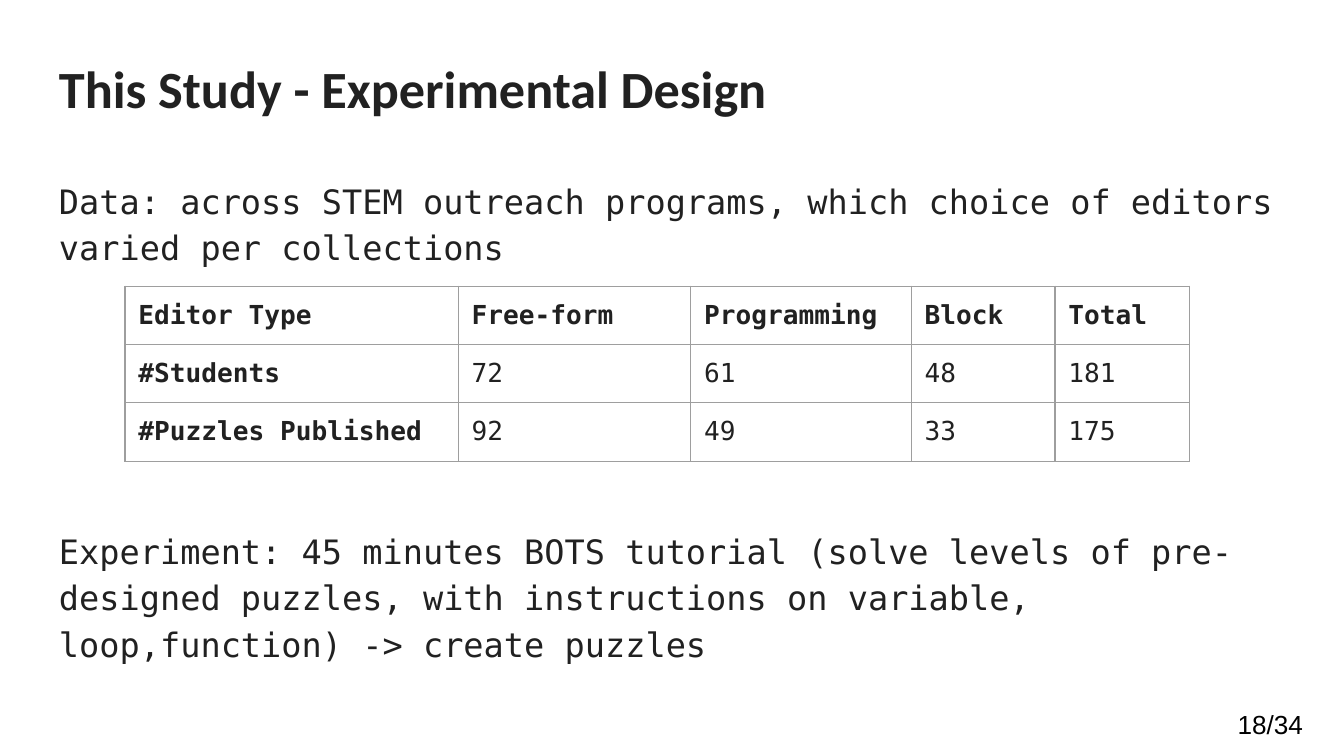
from dataclasses import dataclass

from lxml import etree
from pptx import Presentation
from pptx.dml.color import RGBColor
from pptx.enum.text import MSO_ANCHOR
from pptx.oxml.ns import qn
from pptx.util import Inches, Pt

TOP = MSO_ANCHOR.TOP
PAGE_WIDTH = Inches(10)
PAGE_HEIGHT = PAGE_WIDTH * 9 // 16
INSET = Inches(0.1)


@dataclass(frozen=True)
class Theme:
    """Colours, fonts and type sizes of the deck."""
    ink: str = "212121"
    black: str = "000000"
    rule: str = "9E9E9E"
    rule_width: float = 0.75
    title_font: str = "Calibri"
    body_font: str = "DejaVu Sans Mono"
    number_font: str = "Arial"
    title_size: int = 28
    body_size: int = 18
    small_size: int = 14


@dataclass(frozen=True)
class Box:
    """A rectangle in inches."""
    left: float
    top: float
    width: float
    height: float

    def lengths(self):
        """Return the four lengths that shape methods take."""
        return [Inches(n) for n in (self.left, self.top, self.width, self.height)]


THEME = Theme()
MARGIN = 0.34
TEXT_WIDTH = 10 - 2 * MARGIN
TITLE_BOX = Box(MARGIN, 0.32, TEXT_WIDTH, 0.88)
BODY_BOX = Box(MARGIN, 1.2, TEXT_WIDTH, 3.8)
TABLE_BOX = Box(0.93, 2.13, 7.92, 1.26)
NUMBER_BOX = Box(9.11, 5.22, 0.75, 0.34)

COLUMN_SHARES = (2.48, 1.73, 1.64, 1.07, 1)
TABLE_GAP = 138
ROWS = (
    ("Editor Type", "Free-form", "Programming", "Block", "Total"),
    ("#Students", "72", "61", "48", "181"),
    ("#Puzzles Published", "92", "49", "33", "175"),
)
BODY = (
    "Data: across STEM outreach programs, which choice of editors varied per collections",
    "Experiment: 45 minutes BOTS tutorial (solve levels of pre-designed puzzles, "
    "with instructions on variable, loop,function) -> create puzzles",
)


def set_font(para, name, size, colour, bold=False):
    """Set the font of a whole paragraph."""
    para.font.name = name
    para.font.size = Pt(size)
    para.font.bold = bold
    para.font.color.rgb = RGBColor.from_string(colour)


def set_insets(area, across, down):
    """Set the inner margins of a text frame or a cell."""
    area.margin_left = area.margin_right = across
    area.margin_top = area.margin_bottom = down


def add_text(page, box, texts, down=INSET):
    """Add a wrapped text box with one paragraph per text."""
    frame = page.shapes.add_textbox(*box.lengths()).text_frame
    frame.word_wrap = True
    frame.vertical_anchor = TOP
    set_insets(frame, INSET, down)
    frame.text = "\n".join(texts)
    return frame.paragraphs


def add_title(page, box, text):
    """Place the slide title."""
    for para in add_text(page, box, [text]):
        set_font(para, THEME.title_font, THEME.title_size, THEME.ink, True)


def add_body(page, box, texts, gap):
    """Place the paragraphs, leaving a gap for the table between them."""
    for index, para in enumerate(add_text(page, box, texts)):
        para.line_spacing = 1.15
        if index:
            para.space_before = Pt(gap)
        set_font(para, THEME.body_font, THEME.body_size, THEME.ink)


def add_borders(cell):
    """Draw a thin rule on every side of a cell."""
    properties = cell._tc.get_or_add_tcPr()
    for index, side in enumerate(("a:lnL", "a:lnR", "a:lnT", "a:lnB")):
        line = etree.Element(qn(side), w=str(Pt(THEME.rule_width)))
        fill = etree.SubElement(line, qn("a:solidFill"))
        etree.SubElement(fill, qn("a:srgbClr"), val=THEME.rule)
        properties.insert(index, line)


def add_editor_table(page, box, rows, shares):
    """Place the table of students and puzzles by editor type."""
    table = page.shapes.add_table(len(rows), len(shares), *box.lengths()).table
    table.horz_banding = False
    table.first_row = False
    for column, share in zip(table.columns, shares):
        column.width = Inches(box.width * share / sum(shares))
    for row_index, row in enumerate(rows):
        for column_index, text in enumerate(row):
            cell = table.cell(row_index, column_index)
            cell.text = text
            cell.fill.background()
            set_insets(cell, INSET, INSET)
            add_borders(cell)
            heading = row_index == 0 or column_index == 0
            set_font(cell.text_frame.paragraphs[0], THEME.body_font,
                     THEME.small_size, THEME.ink, heading)


def add_page_number(page, box, text):
    """Place the page number in the corner."""
    for para in add_text(page, box, [text], INSET // 2):
        set_font(para, THEME.number_font, THEME.small_size, THEME.black)


def main():
    """Build the deck and save it."""
    deck = Presentation()
    deck.slide_width, deck.slide_height = PAGE_WIDTH, PAGE_HEIGHT
    page = deck.slides.add_slide(deck.slide_layouts[6])
    add_title(page, TITLE_BOX, "This Study - Experimental Design")
    add_body(page, BODY_BOX, BODY, TABLE_GAP)
    add_editor_table(page, TABLE_BOX, ROWS, COLUMN_SHARES)
    add_page_number(page, NUMBER_BOX, "18/34")
    deck.save("out.pptx")


if __name__ == "__main__":
    main()
